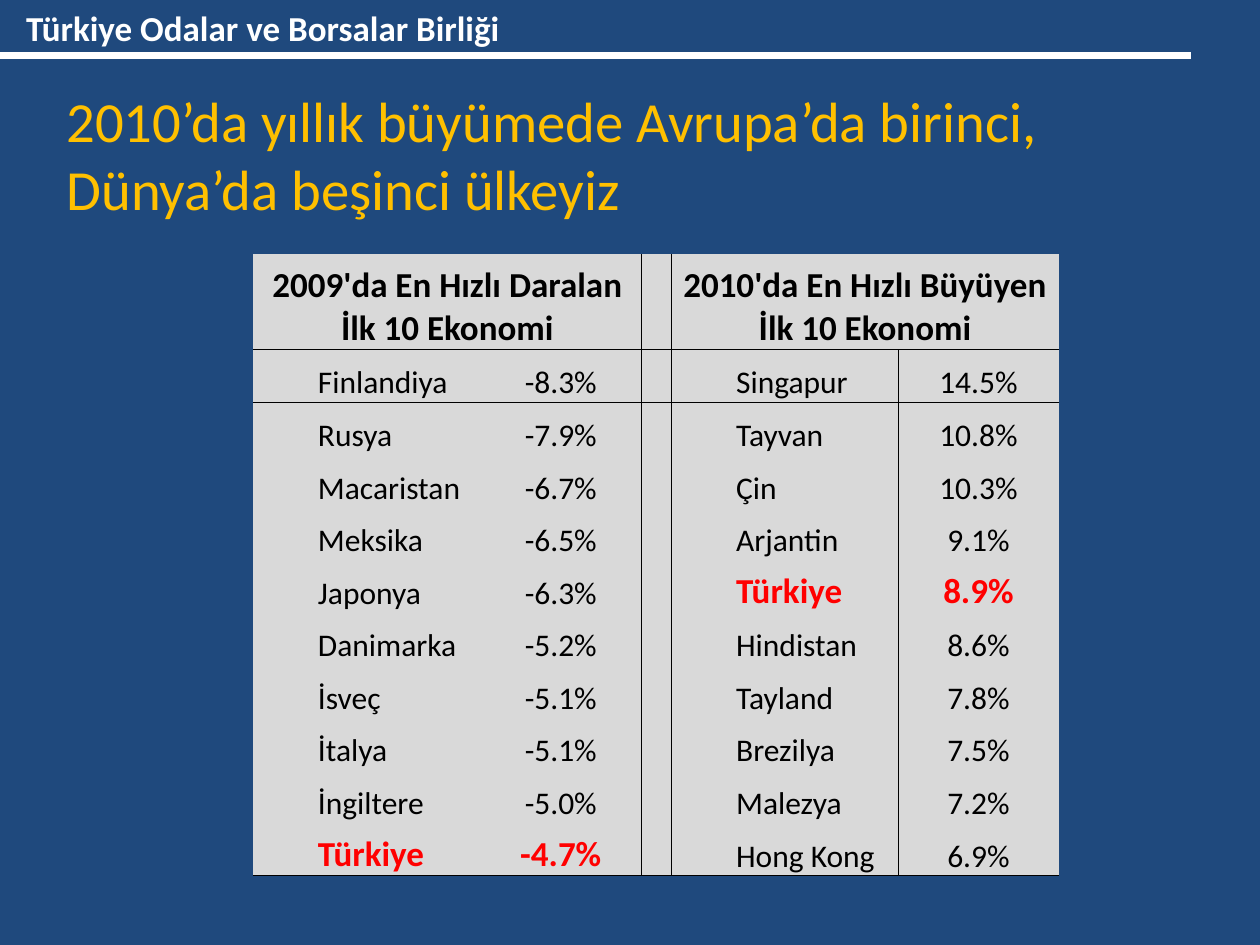
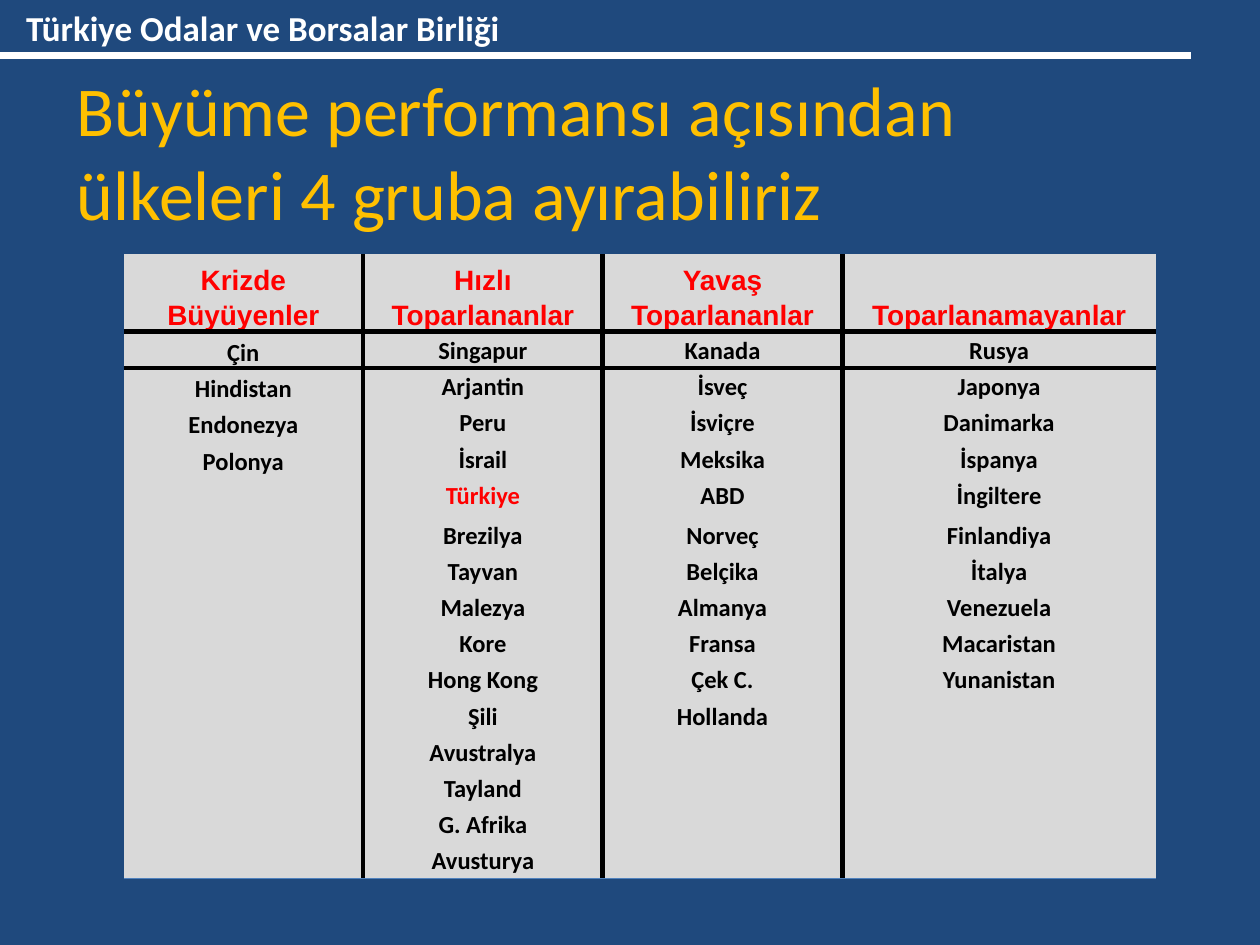
from itertools import zip_longest

from lxml.etree import SubElement
from pptx import Presentation
from pptx.dml.color import RGBColor
from pptx.enum.shapes import MSO_CONNECTOR
from pptx.enum.text import MSO_ANCHOR, PP_ALIGN
from pptx.oxml.ns import qn
from pptx.util import Cm, Pt

NAVY = RGBColor(0x1F, 0x49, 0x7D)
GOLD = RGBColor(0xFF, 0xC0, 0x00)
WHITE = RGBColor(0xFF, 0xFF, 0xFF)
BLACK = RGBColor(0x00, 0x00, 0x00)
RED = RGBColor(0xFF, 0x00, 0x00)
GREY = RGBColor(0xD9, 0xD9, 0xD9)
BLUE = RGBColor(0x4F, 0x81, 0xBD)
NO_TABLE_STYLE = "{2D5ABB26-0587-4C30-8999-92F81FD0307C}"

BAND_STYLE = {"name": "Calibri", "size": Pt(20), "bold": True}
TITLE_STYLE = {"name": "Calibri", "bold": False}
HIGHLIGHT = "Türkiye"

shrinking = [
    ("Finlandiya", "-8.3%"), ("Rusya", "-7.9%"), ("Macaristan", "-6.7%"),
    ("Meksika", "-6.5%"), ("Japonya", "-6.3%"), ("Danimarka", "-5.2%"),
    ("İsveç", "-5.1%"), ("İtalya", "-5.1%"), ("İngiltere", "-5.0%"),
    ("Türkiye", "-4.7%"),
]
growing = [
    ("Singapur", "14.5%"), ("Tayvan", "10.8%"), ("Çin", "10.3%"),
    ("Arjantin", "9.1%"), ("Türkiye", "8.9%"), ("Hindistan", "8.6%"),
    ("Tayland", "7.8%"), ("Brezilya", "7.5%"), ("Malezya", "7.2%"),
    ("Hong Kong", "6.9%"),
]
groups = {
    "Krizde Büyüyenler": ["Çin", "Hindistan", "Endonezya", "Polonya"],
    "Hızlı Toparlananlar": [
        "Singapur", "Arjantin", "Peru", "İsrail", "Türkiye", "Brezilya", "Tayvan", "Malezya",
        "Kore", "Hong Kong", "Şili", "Avustralya", "Tayland", "G. Afrika", "Avusturya"],
    "Yavaş Toparlananlar": [
        "Kanada", "İsveç", "İsviçre", "Meksika", "ABD", "Norveç", "Belçika", "Almanya",
        "Fransa", "Çek C.", "Hollanda"],
    "Toparlanamayanlar": [
        "Rusya", "Japonya", "Danimarka", "İspanya", "İngiltere", "Finlandiya", "İtalya",
        "Venezuela", "Macaristan", "Yunanistan"],
}

ranking_rows = [["2009'da En Hızlı Daralan İlk 10 Ekonomi", "", "",
                 "2010'da En Hızlı Büyüyen İlk 10 Ekonomi", ""]]
ranking_rows += [[*left, "", *right] for left, right in zip(shrinking, growing)]
group_rows = [list(groups), *zip_longest(*groups.values(), fillvalue="")]

pages = [
    {
        "title": "2010’da yıllık büyümede Avrupa’da birinci, Dünya’da beşinci ülkeyiz",
        "title_at": (1.09, 1.52, 22.86, 3.18), "title_size": 32.4,
        "rows": ranking_rows, "left": 5.11,
        "widths": [4.57, 3.25, 0.61, 4.57, 3.23],
        "heights": [1.92] + [1.06] * 10,
        "merges": [(0, 1), (3, 4)], "ruled": {1, 2}, "rule": 0.5, "last_rule": (BLACK, 0.5),
        "names": {0, 3}, "bottom": range(5), "insets": (0.03, 0.03), "spacing": 1,
        "head": {"name": "Calibri", "size": Pt(20), "bold": True, "color": BLACK},
        "body": {"name": "Calibri", "size": Pt(18), "bold": False, "color": BLACK},
        "marked": {"name": "Calibri", "size": Pt(20), "bold": True, "color": RED},
    },
    {
        "title": "Büyüme performansı açısından ülkeleri 4 gruba ayırabiliriz",
        "title_at": (1.3, 1.73, 22, 2.62), "title_size": 40,
        "rows": group_rows, "left": 2.49,
        "widths": [4.83, 4.83, 4.83, 6.32],
        "heights": [1.43] + [0.73] * 4 + [0.8] + [0.73] * 10,
        "merges": [], "ruled": {0, 1, 2}, "rule": 3, "last_rule": (BLUE, 1),
        "names": set(), "bottom": {0}, "insets": (0.18, 0), "spacing": 1.15,
        "head": {"name": "Arial", "size": Pt(16), "bold": True, "color": RED},
        "body": {"name": "Calibri", "size": Pt(14), "bold": True, "color": BLACK},
        "marked": {"name": "Calibri", "size": Pt(14), "bold": True, "color": RED},
    },
]


def write(paragraph, text, style):
    span = paragraph.add_run()
    span.text = text
    for key, value in style.items():
        if key == "color":
            span.font.color.rgb = value
        else:
            setattr(span.font, key, value)


def draw_edge(cell, side, color, points):
    properties = cell._tc.get_or_add_tcPr()
    edge = SubElement(properties, qn(f"a:ln{side}"), w=str(Pt(points)))
    fill = SubElement(edge, qn("a:solidFill"))
    SubElement(fill, qn("a:srgbClr"), val=str(color))


deck = Presentation()
deck.slide_width = Cm(25.4)
deck.slide_height = Cm(19.05)

for content in pages:
    page = deck.slides.add_slide(deck.slide_layouts[6])
    page.background.fill.solid()
    page.background.fill.fore_color.rgb = NAVY

    band_line = page.shapes.add_connector(
        MSO_CONNECTOR.STRAIGHT, 0, Cm(1.12), Cm(24), Cm(1.12))
    band_line.line.color.rgb = WHITE
    band_line.line.width = Pt(4)
    SubElement(band_line._element.spPr, qn("a:effectLst"))

    title_style = TITLE_STYLE | {"size": Pt(content["title_size"]), "color": GOLD}
    for place, text, style in [
        ((0.28, 0, 11.6, 1.12), "Türkiye Odalar ve Borsalar Birliği",
         BAND_STYLE | {"color": WHITE}),
        (content["title_at"], content["title"], title_style),
    ]:
        box = page.shapes.add_textbox(*map(Cm, place))
        box.text_frame.word_wrap = True
        box.text_frame.vertical_anchor = MSO_ANCHOR.MIDDLE
        write(box.text_frame.paragraphs[0], text, style)

    rows, widths, heights = content["rows"], content["widths"], content["heights"]
    table = page.shapes.add_table(
        len(rows), len(widths), Cm(content["left"]), Cm(5.13),
        Cm(sum(widths)), Cm(sum(heights))).table
    table._tbl.tblPr.find(qn("a:tableStyleId")).text = NO_TABLE_STYLE
    for column, width in zip(table.columns, widths):
        column.width = Cm(width)
    for row, height in zip(table.rows, heights):
        row.height = Cm(height)
    for first, last in content["merges"]:
        table.cell(0, first).merge(table.cell(0, last))

    side_inset, top_inset = map(Cm, content["insets"])
    last_row = len(rows) - 1
    for row_index, row in enumerate(rows):
        for column_index, text in enumerate(row):
            cell = table.cell(row_index, column_index)
            cell.margin_left = cell.margin_right = side_inset
            cell.margin_top, cell.margin_bottom = top_inset, 0
            at_bottom = row_index == 0 or column_index in content["bottom"]
            cell.vertical_anchor = MSO_ANCHOR.BOTTOM if at_bottom else MSO_ANCHOR.TOP

            if column_index - 1 in content["ruled"]:
                draw_edge(cell, "L", BLACK, content["rule"])
            if column_index in content["ruled"] or (row_index, column_index) in [
                    (0, first) for first, last in content["merges"] if last in content["ruled"]]:
                draw_edge(cell, "R", BLACK, content["rule"])
            if row_index == 1:
                draw_edge(cell, "T", BLACK, content["rule"])
            if row_index == 0:
                draw_edge(cell, "B", BLACK, content["rule"])
            elif row_index == last_row:
                draw_edge(cell, "B", *content["last_rule"])
            cell.fill.solid()
            cell.fill.fore_color.rgb = GREY

            para = cell.text_frame.paragraphs[0]
            if not text:
                SubElement(para._p, qn("a:endParaRPr"), sz="1400")
                continue
            para.line_spacing = content["spacing"]
            if row_index and column_index in content["names"]:
                para._p.get_or_add_pPr().set("marL", str(Cm(1.27)))
            else:
                para.alignment = PP_ALIGN.CENTER
            is_value = text.endswith("%")
            country = row[column_index - 1] if is_value else text
            if row_index == 0:
                style = content["head"]
            elif country == HIGHLIGHT:
                style = content["marked"]
            else:
                style = content["body"]
            write(para, text, style)

deck.save("out.pptx")
